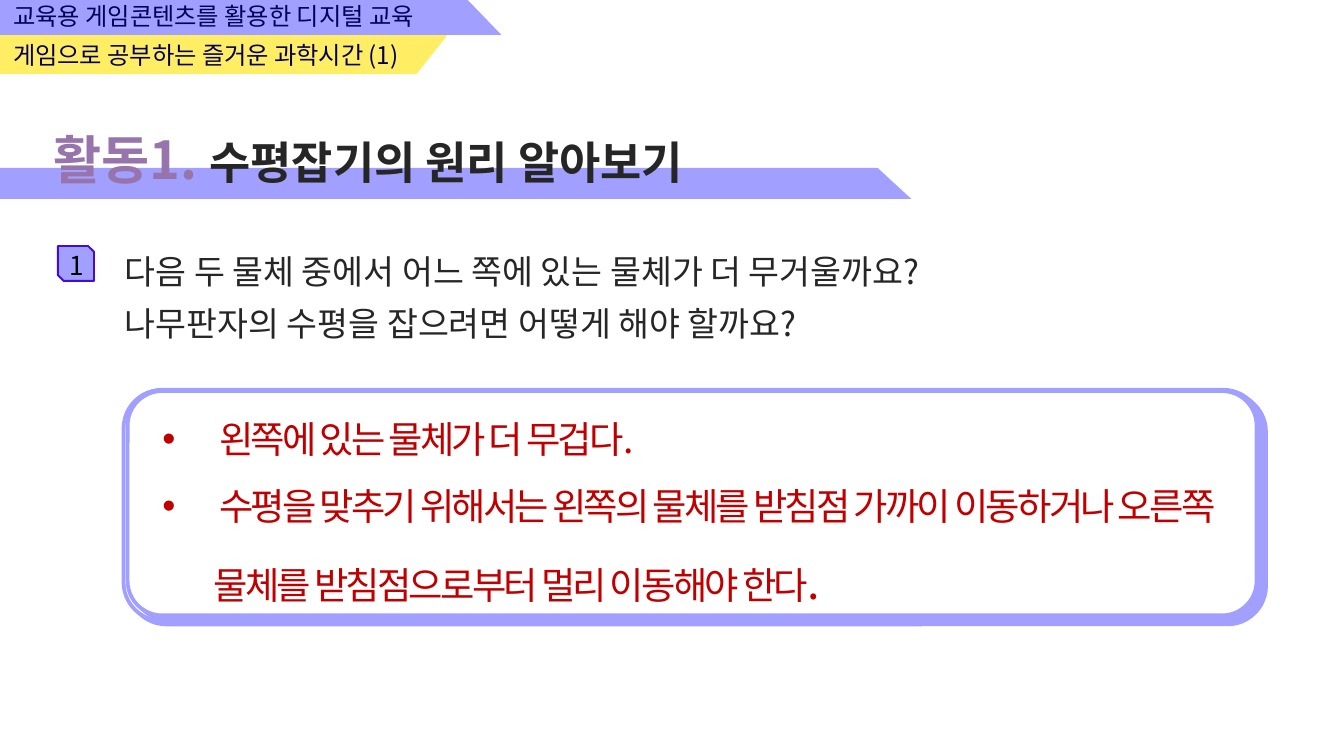
from lxml.etree import SubElement
from pptx import Presentation
from pptx.dml.color import RGBColor
from pptx.enum.shapes import MSO_SHAPE as Shape
from pptx.enum.text import MSO_ANCHOR as Anchor, MSO_AUTO_SIZE as AutoSize, PP_ALIGN as Align
from pptx.oxml.ns import qn
from pptx.util import Pt

FONT = "Noto Sans CJK KR"
WHITE = RGBColor(0xFF, 0xFF, 0xFF)
BLACK = RGBColor(0, 0, 0)
LILAC = RGBColor(0xA1, 0x9F, 0xFF)
YELLOW = RGBColor(0xFF, 0xEE, 0x63)
NAVY = RGBColor(0x04, 0x02, 0x57)
CHARCOAL = RGBColor(0x26, 0x26, 0x26)
VIOLET = RGBColor(0x44, 0x0B, 0xD4)
MAUVE = RGBColor(0x97, 0x74, 0xAB)
RED = RGBColor(0xC0, 0, 0)

BANNERS = [
    (YELLOW, 18.7, 39.6, 239.8, 223.2, "게임으로 공부하는 즐거운 과학시간 (1)", (0, 18, 239.8, 23)),
    (LILAC, 0, 18.7, 250.6, 268.6, "교육용 게임콘텐츠를 활용한 디지털 교육", (0, -2.9, 251.3, 23)),
]
TITLE = [[("활동1. ", {"size": 28, "color": MAUVE}), ("수평잡기의 원리 알아보기", {})]]
TITLE_BAR = (LILAC, 90, 106.6, 470.2, 488.2)
NUMBER = [[("1", {})]]
QUESTION = [
    [("다음 두 물체 중에서 어느 쪽에 있는 물체가 더 무거울까요?", {})],
    [("나무판자의 수평을 잡으려면 어떻게 해야 할까요?", {})],
]
ANSWERS = [
    [(" 왼쪽에 있는 물체가 더 무겁다.", {})],
    [(" 수평을 맞추기 위해서는 왼쪽의 물체를 받침점 가까이 이동하거나 "
      "오른쪽 물체를 받침점으로부터 멀리 이동해야 한다", {}), (".", {"size": 24})],
]
ANSWER_CARDS = [((66.2, 208.8, 609.8, 123.8), 0.167), ((68.4, 209.5, 604.8, 120.2), 0.154)]


def write(paragraphs, box, holder=None, size=13, color=NAVY, bold=False,
          anchor=Anchor.TOP, leading=None, bullet=None, hang=27.4, tracking=None):
    left, top, width, height = map(Pt, box)
    if holder is None:
        holder = slide.shapes.add_textbox(left, top, width, height)
    else:
        holder.left, holder.top, holder.width, holder.height = left, top, width, height
    frame = holder.text_frame
    frame.word_wrap = True
    frame.auto_size = AutoSize.SHAPE_TO_FIT_TEXT
    frame.vertical_anchor = anchor
    for index, runs in enumerate(paragraphs):
        paragraph = frame.add_paragraph() if index else frame.paragraphs[0]
        paragraph.alignment = Align.LEFT
        if bullet:
            properties = paragraph._p.get_or_add_pPr()
            properties.set("marL", str(Pt(hang)))
            properties.set("indent", str(-Pt(hang)))
            SubElement(properties, qn("a:buFont"), typeface="Arial")
            SubElement(properties, qn("a:buChar"), char=bullet)
        if leading:
            paragraph.line_spacing = leading
        for text, change in runs:
            run = paragraph.add_run()
            run.text = text
            run.font.size = Pt(change.get("size", size))
            run.font.bold = bold
            run.font.color.rgb = change.get("color", color)
            run.font.name = FONT
            properties = run._r.get_or_add_rPr()
            SubElement(properties, qn("a:ea"), typeface=FONT)
            if tracking:
                properties.set("spc", str(int(tracking * 100)))


def add_band(color, top, bottom, top_right, bottom_right):
    builder = slide.shapes.build_freeform(Pt(0), Pt(top))
    corners = [(top_right, top), (bottom_right, bottom), (0, bottom)]
    builder.add_line_segments([(Pt(x), Pt(y)) for x, y in corners], close=True)
    band = builder.convert_to_shape()
    band.shadow.inherit = False
    band.fill.solid()
    band.fill.fore_color.rgb = color
    band.line.fill.background()


def add_panel(preset, box, fill, line, weight):
    panel = slide.shapes.add_shape(preset, *map(Pt, box))
    panel.shadow.inherit = False
    panel.fill.solid()
    panel.fill.fore_color.rgb = fill
    panel.line.color.rgb = line
    panel.line.width = Pt(weight)
    return panel


def cast_shadow(panel, color, distance, degrees):
    effects = panel._element.spPr.find(qn("a:effectLst"))
    shadow = SubElement(effects, qn("a:outerShdw"), blurRad="0", dist=str(Pt(distance)),
                        dir=str(degrees * 60000), algn="tl", rotWithShape="0")
    SubElement(shadow, qn("a:srgbClr"), val=str(color))


deck = Presentation()
deck.slide_width, deck.slide_height = Pt(720), Pt(405)
slide = deck.slides.add_slide(deck.slide_layouts[5])

for color, top, bottom, top_right, bottom_right, label, label_box in BANNERS:
    add_band(color, top, bottom, top_right, bottom_right)
    write([[(label, {})]], label_box)

write(QUESTION, (59.8, 124.6, 623.5, 62.6), size=18, color=CHARCOAL,
      anchor=Anchor.MIDDLE, leading=1.3)
add_panel(Shape.SNIP_2_DIAG_RECTANGLE, (31, 131.8, 19.4, 18.7), LILAC, VIOLET, 1)
write(NUMBER, (30.2, 130.3, 20.2, 24.5), size=14, color=BLACK)

for box, rounding in ANSWER_CARDS:
    card = add_panel(Shape.ROUNDED_RECTANGLE, box, WHITE, LILAC, 2)
    card.adjustments[0] = rounding
    cast_shadow(card, LILAC, 3, 40)
write(ANSWERS, (79.9, 206.6, 579.6, 123.8), size=20, color=RED, anchor=Anchor.MIDDLE,
      leading=1.5, bullet="•", tracking=-1.5)

add_band(*TITLE_BAR)
title = slide.shapes.title
write(TITLE, (21.6, 64.8, 475.9, 41), holder=title, size=24, color=CHARCOAL, bold=True)
slide.shapes._spTree.append(title._element)

deck.save("out.pptx")
